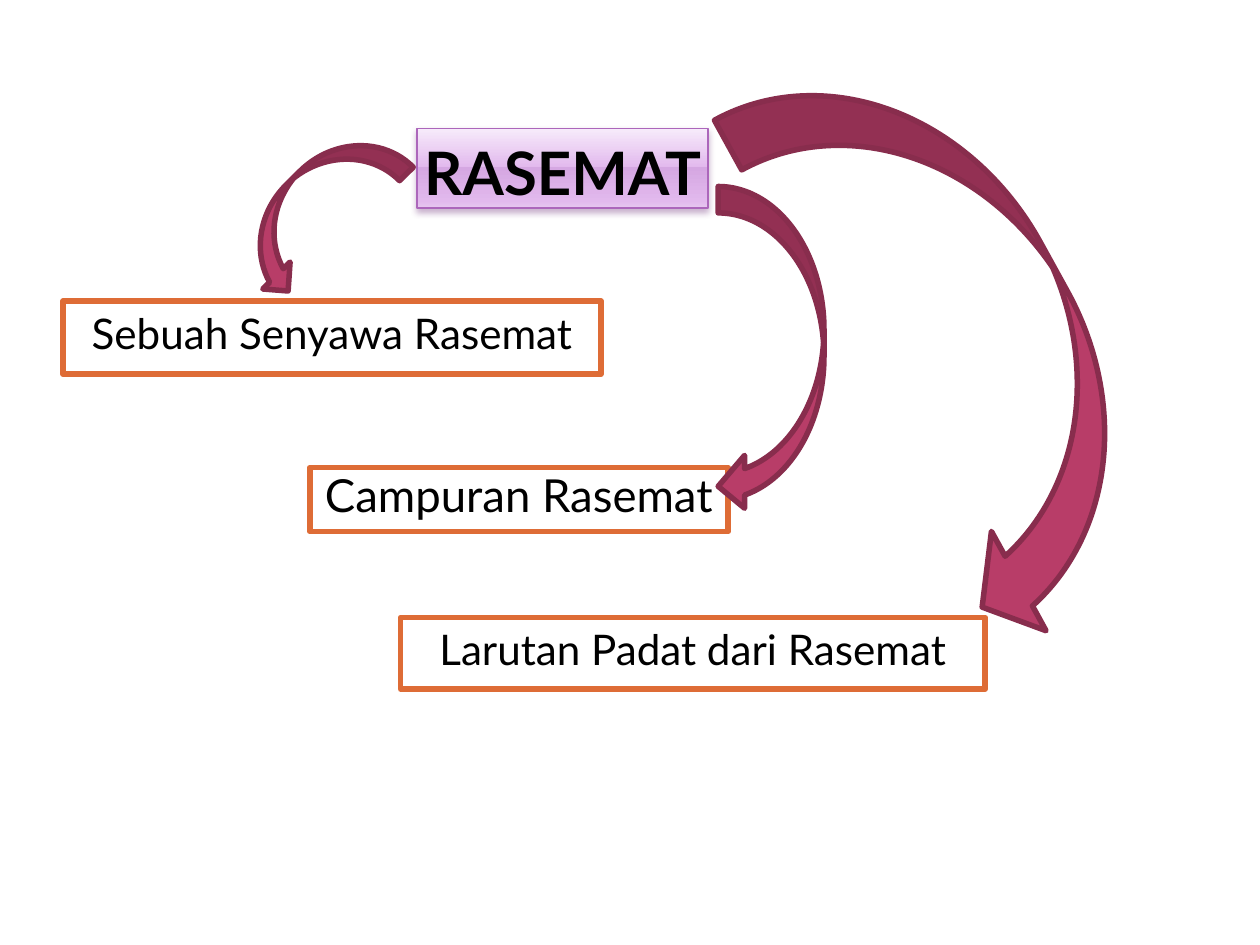
from dataclasses import dataclass

from lxml import etree
from pptx import Presentation
from pptx.dml.color import RGBColor
from pptx.enum import shapes, text
from pptx.oxml import ns
from pptx.util import Inches, Pt


@dataclass(frozen=True)
class Theme:
    font: str = "Lato"
    ink: str = "000000"
    paper: str = "FFFFFF"
    box_line: str = "DE6C36"
    arrow_fill: str = "B83D68"
    arrow_line: str = "882D4D"
    title_line: str = "AC66BB"
    title_shadow: str = "6E307B"
    title_stops: tuple = ((0, "F7EBFB"), (49, "E2B9ED"), (49, "D5A7E2"),
                          (92, "E2B9ED"), (100, "E6C6EF"))
    title_size: float = 34.2
    label_size: float = 24.1
    large_label_size: float = 26
    thin: float = 0.9
    thick: float = 3.15


THEME = Theme()
TITLE = ("RASEMAT", (3.31, 1.02, 2.31, 0.63))
LABELS = [
    ("Sebuah Senyawa Rasemat", (0.5, 2.39, 4.27, 0.58), THEME.label_size, 1),
    ("Campuran Rasemat", (2.46, 3.71, 3.32, 0.51), THEME.large_label_size, 0.9),
    ("Larutan Padat dari Rasemat", (3.18, 4.9, 4.64, 0.57), THEME.label_size, 1),
]
ARROWS = [
    {"place": (2.21, 0.88, 0.61, 1.55), "turn": 45.3, "flip": True, "head": 0.25},
    {"place": (5.7, 1.48, 0.84, 2.59), "turn": 0, "flip": False, "head": 0.25},
    {"place": (6.73, 0.22, 1.8, 4.86), "turn": 331.2, "flip": False, "head": 0.197},
]


def add_shape(page, kind, place, fill, line, width):
    shape = page.shapes.add_shape(kind, *map(Inches, place))
    shape.shadow.inherit = False
    shape.fill.solid()
    shape.fill.fore_color.rgb = RGBColor.from_string(fill)
    shape.line.color.rgb = RGBColor.from_string(line)
    shape.line.width = Pt(width)
    return shape


def write(box, words, size, anchor, bold=False, spacing=1):
    frame = box.text_frame
    frame.word_wrap = False
    frame.vertical_anchor = anchor
    para = frame.paragraphs[0]
    para.text = words
    para.alignment = text.PP_ALIGN.CENTER
    para.line_spacing = spacing
    para.font.name = THEME.font
    para.font.size = Pt(size)
    para.font.bold = bold
    para.font.color.rgb = RGBColor.from_string(THEME.ink)


def add_color(parent, color):
    return etree.SubElement(parent, ns.qn("a:srgbClr"), val=color)


def add_title(page):
    words, place = TITLE
    box = add_shape(page, shapes.MSO_SHAPE.RECTANGLE, place,
                    THEME.paper, THEME.title_line, THEME.thin)
    box.fill.gradient()
    box.fill.gradient_angle = 270
    properties = box._element.spPr
    stops = properties.find(".//" + ns.qn("a:gsLst"))
    for stop in list(stops):
        stops.remove(stop)
    for percent, color in THEME.title_stops:
        add_color(etree.SubElement(stops, ns.qn("a:gs"), pos=str(percent * 1000)), color)
    shadow = etree.SubElement(properties.find(ns.qn("a:effectLst")), ns.qn("a:outerShdw"),
                              blurRad=str(Pt(4)), dist=str(Pt(2)), dir="5400000",
                              rotWithShape="0")
    etree.SubElement(add_color(shadow, THEME.title_shadow), ns.qn("a:alpha"), val="38000")
    frame = box.text_frame
    frame.margin_left = frame.margin_right = Inches(0.05)
    frame.margin_top = frame.margin_bottom = 0
    write(box, words, THEME.title_size, text.MSO_ANCHOR.BOTTOM, bold=True)


def add_arrow(page, place, turn, flip, head):
    arrow = add_shape(page, shapes.MSO_SHAPE.CURVED_LEFT_ARROW, place,
                      THEME.arrow_fill, THEME.arrow_line, THEME.thick)
    arrow.rotation = turn
    arrow.adjustments[2] = head
    if flip:
        arrow._element.spPr.find(ns.qn("a:xfrm")).set("flipH", "1")


def main():
    """Build the racemate slide: a title linked by curved arrows to three kinds."""
    deck = Presentation()
    deck.slide_width, deck.slide_height = Inches(10), Inches(7.5)
    page = deck.slides.add_slide(deck.slide_layouts[6])
    add_title(page)
    for words, place, size, spacing in LABELS:
        box = add_shape(page, shapes.MSO_SHAPE.RECTANGLE, place,
                        THEME.paper, THEME.box_line, THEME.thick)
        write(box, words, size, text.MSO_ANCHOR.TOP, spacing=spacing)
    for arrow in ARROWS:
        add_arrow(page, **arrow)
    deck.save("out.pptx")


if __name__ == "__main__":
    main()
